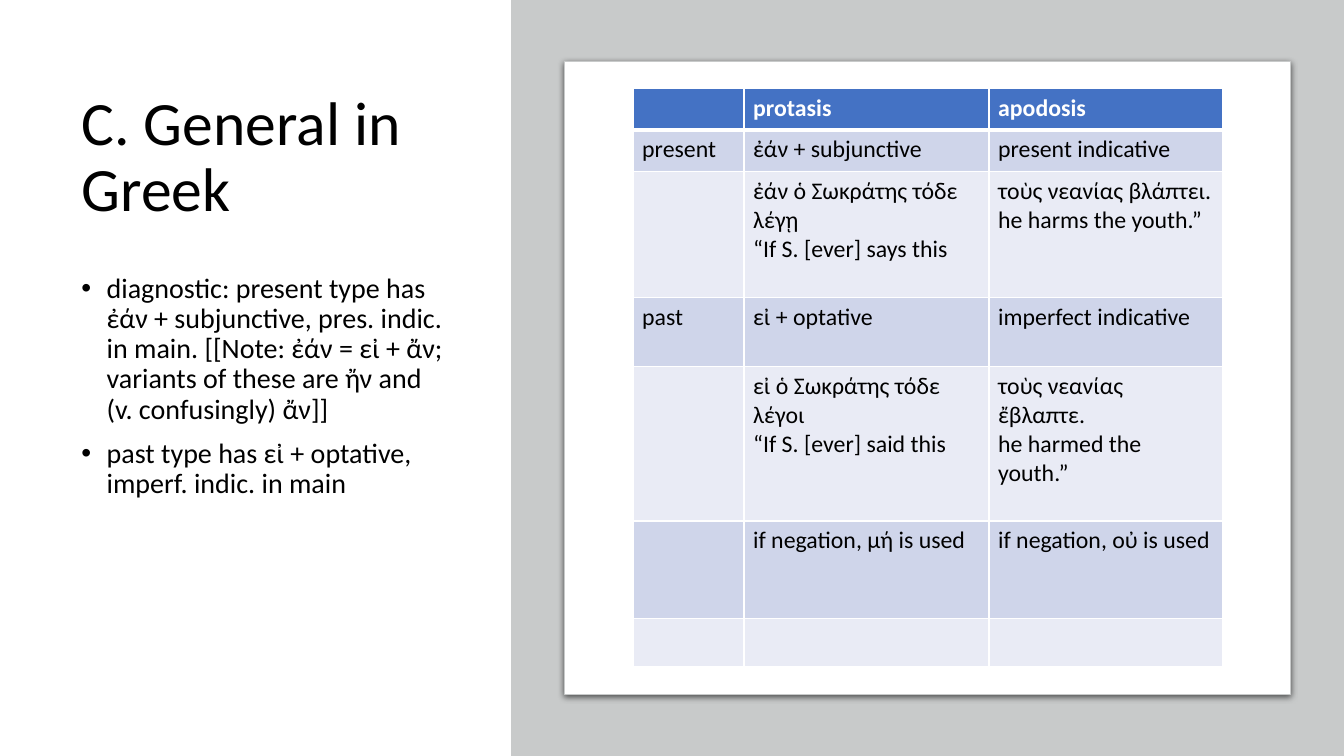
import pptx
import pptx.dml.color
import pptx.enum.shapes
import pptx.enum.text
import pptx.oxml
import pptx.oxml.ns
import pptx.util
from pptx.util import Inches

FONT = "Calibri"
WHITE, BLACK, GREY = "FFFFFF", "000000", "C8CACA"
HEAD, BANDS = "4472C4", ("CFD5EA", "E9EBF5")
TITLE = "C. General in Greek"
NOTES = [
    "diagnostic: present type has ἐάν + subjunctive, pres. indic. in main. "
    "[[Note: ἐάν = εἰ + ἄν; variants of these are ἤν and (v. confusingly) ἄν]]",
    "past type has εἰ + optative, imperf. indic. in main",
]
COLS = (1.1, 2.43, 2.32)
ROWS = [
    (0.41, "", "protasis", "apodosis"),
    (0.41, "present", "ἐάν + subjunctive", "present indicative"),
    (1.25, "", "ἐάν ὁ Σωκράτης τόδε λέγῃ\n“If S. [ever] says this",
     "τοὺς νεανίας βλάπτει.\nhe harms the youth.”"),
    (0.69, "past", "εἰ + optative", "imperfect indicative"),
    (1.53, "", "εἰ ὁ Σωκράτης τόδε λέγοι\n“If S. [ever] said this",
     "τοὺς νεανίας ἔβλαπτε.\nhe harmed the youth.”"),
    (0.97, "", "if negation, μή is used", "if negation, οὐ is used"),
    (0.47, "", "", ""),
]


def paint(target, color):
    """Give a fill, or the fill of a line, one solid colour."""
    target.solid()
    target.fore_color.rgb = pptx.dml.color.RGBColor.from_string(color)


def add_xml(parent, body):
    """Append an element written in the drawing namespace and return it."""
    tag, rest = body[1:].split(" ", 1)
    space = pptx.oxml.ns.nsdecls("a")
    node = pptx.oxml.parse_xml(f"<{tag} {space} {rest}")
    parent.append(node)
    return node


def style(frame, size, color, bold=False, lines=None):
    """Set the font and line spacing of every paragraph in a frame."""
    for par in frame.paragraphs:
        par.font.name = FONT
        par.font.size = pptx.util.Pt(size)
        par.font.bold = bold
        paint(par.font.fill, color)
        if lines:
            par.line_spacing = lines


def set_title(slide):
    """Place and format the title placeholder."""
    title = slide.shapes.title
    title.left, title.top = Inches(0.71), Inches(0.69)
    title.width, title.height = Inches(3.83), Inches(1.77)
    frame = title.text_frame
    frame.text = TITLE
    frame.auto_size = pptx.enum.text.MSO_AUTO_SIZE.NONE
    frame.vertical_anchor = pptx.enum.text.MSO_ANCHOR.MIDDLE
    frame.paragraphs[0].alignment = pptx.enum.text.PP_ALIGN.LEFT
    style(frame, 44, BLACK, lines=0.9)


def add_notes(slide):
    """Add the bulleted list under the title."""
    box = slide.shapes.add_textbox(Inches(0.71), Inches(2.67), Inches(3.83), Inches(4.14))
    frame = box.text_frame
    frame.word_wrap = True
    frame.text = "\n".join(NOTES)
    style(frame, 20, BLACK, lines=0.9)
    for par in frame.paragraphs:
        par.space_before = pptx.util.Pt(10)
        props = par._p.get_or_add_pPr()
        props.set("marL", str(Inches(0.25)))
        props.set("indent", str(-Inches(0.25)))
        font = props.find(pptx.oxml.ns.qn("a:defRPr"))
        for body in ('<a:buFont typeface="Arial"/>', '<a:buChar char="•"/>'):
            node = add_xml(props, body)
            if font is not None:
                font.addprevious(node)


def add_panel(slide, left, top, width, height, color):
    """Add a plain filled rectangle."""
    panel = slide.shapes.add_shape(
        pptx.enum.shapes.MSO_SHAPE.RECTANGLE,
        Inches(left), Inches(top), Inches(width), Inches(height))
    panel.shadow.inherit = False
    paint(panel.fill, color)
    panel.line.fill.background()
    return panel


def add_card(slide):
    """Add the white card with its thin edge and soft shadow."""
    card = add_panel(slide, 5.6, 0.61, 7.2, 6.28, WHITE)
    paint(card.line.fill, GREY)
    card.line.width = pptx.util.Pt(0.75)
    effects = card._element.spPr.find(pptx.oxml.ns.qn("a:effectLst"))
    blur, dist = pptx.util.Pt(4.5), pptx.util.Pt(1.5)
    add_xml(effects, f'<a:outerShdw blurRad="{blur}" dist="{dist}" dir="5400000">'
            f'<a:srgbClr val="{BLACK}"><a:alpha val="63000"/></a:srgbClr></a:outerShdw>')


def fill_cell(cell, text, first, band):
    """Write one table cell with its borders, fill and font."""
    cell.text = text
    cell.margin_left = cell.margin_right = Inches(0.09)
    cell.margin_top = cell.margin_bottom = Inches(0.05)
    props = cell._tc.get_or_add_tcPr()
    for side in "LRTB":
        width = pptx.util.Pt(3 if first and side == "B" else 1)
        add_xml(props, f'<a:ln{side} w="{width}"><a:solidFill>'
                f'<a:srgbClr val="{WHITE}"/></a:solidFill></a:ln{side}>')
    paint(cell.fill, HEAD if first else band)
    style(cell.text_frame, 17, WHITE if first else BLACK, bold=first)


def add_grid(slide):
    """Add the table of conditions."""
    tall = sum(row[0] for row in ROWS)
    grid = slide.shapes.add_table(
        len(ROWS), len(COLS), Inches(6.28), Inches(0.88),
        Inches(sum(COLS)), Inches(tall)).table
    for col, width in zip(grid.columns, COLS):
        col.width = Inches(width)
    for i, (height, *texts) in enumerate(ROWS):
        grid.rows[i].height = Inches(height)
        for j, text in enumerate(texts):
            fill_cell(grid.cell(i, j), text, i == 0, BANDS[(i - 1) % 2])


def main():
    """Build the slide and save it."""
    deck = pptx.Presentation()
    deck.slide_width, deck.slide_height = Inches(13.33), Inches(7.5)
    slide = deck.slides.add_slide(deck.slide_layouts[5])
    set_title(slide)
    add_notes(slide)
    add_panel(slide, 5.07, 0, 8.26, 7.5, GREY)
    add_card(slide)
    add_grid(slide)
    deck.save("out.pptx")


if __name__ == "__main__":
    main()
